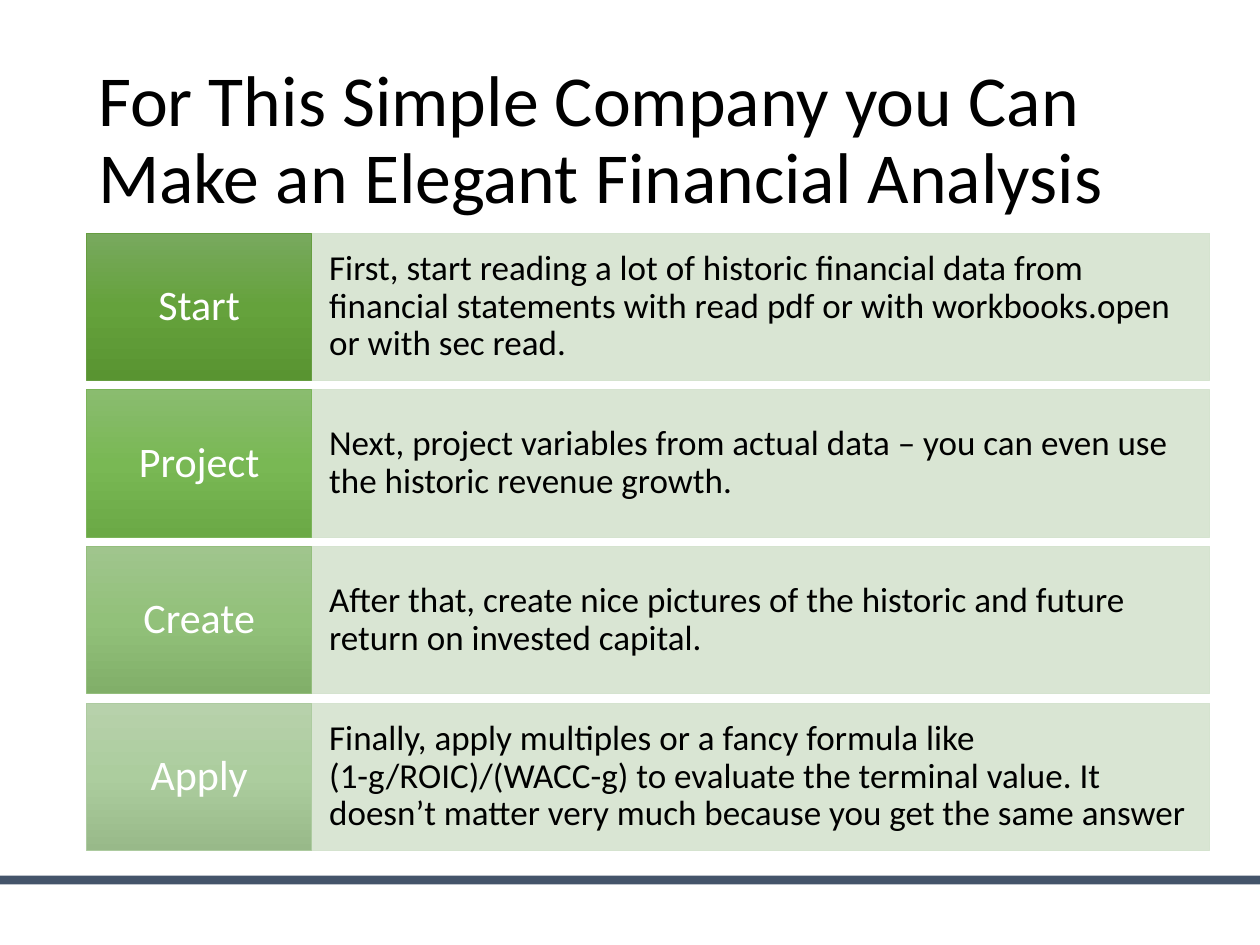
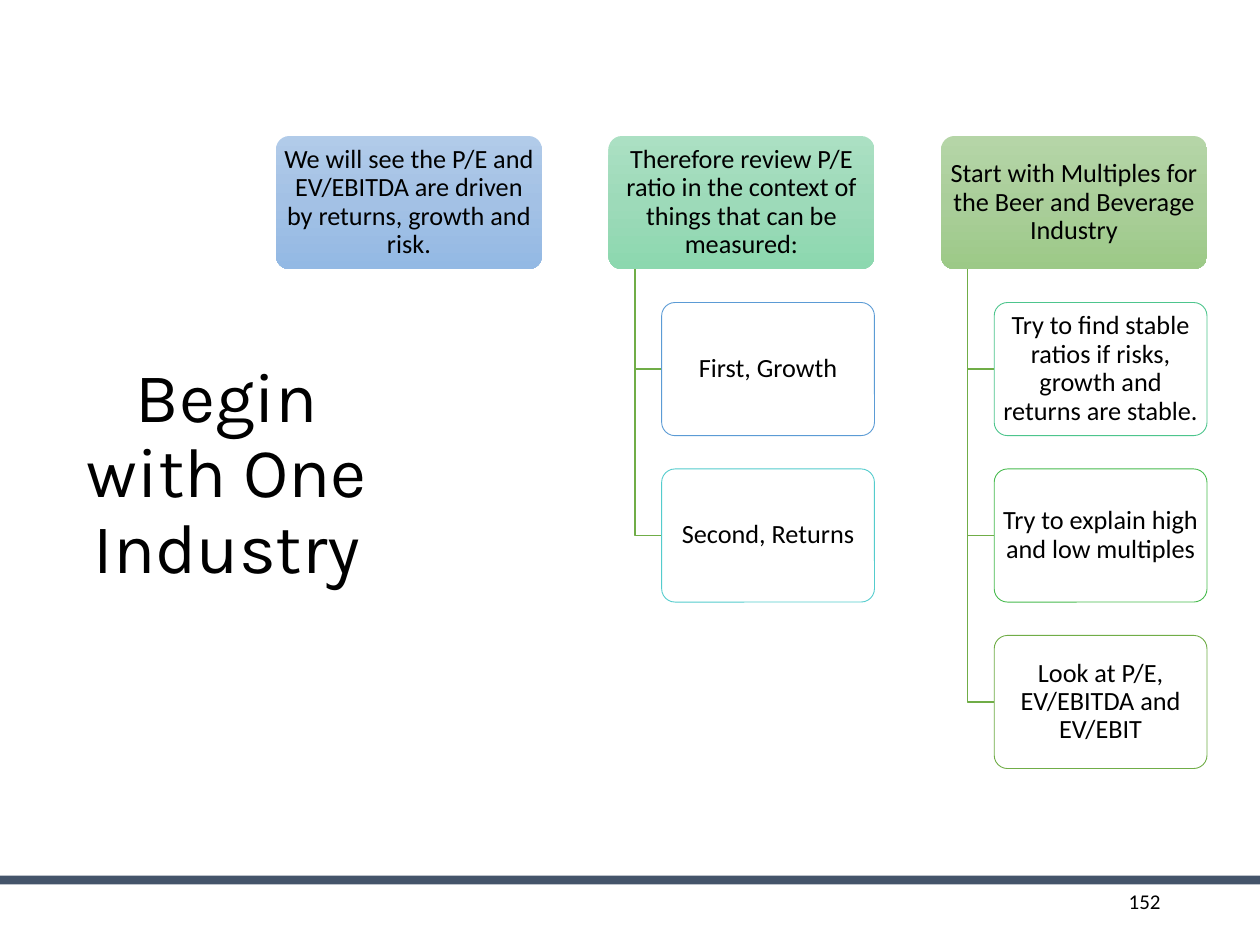
from copy import deepcopy
from dataclasses import dataclass

from lxml.etree import SubElement
from pptx import Presentation
from pptx.dml.color import RGBColor
from pptx.enum.shapes import MSO_SHAPE
from pptx.enum.text import MSO_ANCHOR, PP_ALIGN
from pptx.oxml.ns import qn
from pptx.util import Inches, Pt


@dataclass(frozen=True)
class Theme:
    body_font: str = "Calibri"
    accent_font: str = "Karla"
    black: str = "000000"
    white: str = "FFFFFF"
    band: str = "44546A"
    step_panel: str = "D5E3CF"
    branch: str = "70AD47"
    title_size: int = 41
    side_title_size: int = 40
    step_size: int = 24
    detail_size: int = 20
    node_size: int = 15
    number_size: int = 12
    outline: float = 0.5
    branch_width: float = 1
    alpha: int = 90


THEME = Theme()


@dataclass(frozen=True)
class Box:
    """A region in inches."""
    left: float
    top: float
    width: float
    height: float

    def inner(self, left, top, width, height):
        """A region inside this one, given as shares of its size."""
        return Box(self.left + left * self.width, self.top + top * self.height,
                   width * self.width, height * self.height)

    def lengths(self):
        return [Inches(n) for n in (self.left, self.top, self.width, self.height)]


PAGE = Box(0, 0, 10, 7.5)
COLUMNS, ROWS = 100, 75


def on_grid(left, top, width, height):
    """A region of the page, counted in grid columns and rows."""
    return PAGE.inner(left / COLUMNS, top / ROWS, width / COLUMNS, height / ROWS)


# Text and shapes

def write(shape, text, *, size, font=THEME.body_font, color=THEME.black,
          align=PP_ALIGN.LEFT, spacing=0.9, inset=(0.1, 0.05)):
    frame = shape.text_frame
    frame.word_wrap = True
    frame.vertical_anchor = MSO_ANCHOR.MIDDLE
    frame.margin_left = frame.margin_right = Inches(inset[0])
    frame.margin_top = frame.margin_bottom = Inches(inset[1])
    para = frame.paragraphs[0]
    para.alignment = align
    para.line_spacing = spacing
    span = para.add_run()
    span.text = text
    span.font.name = font
    span.font.size = Pt(size)
    span.font.color.rgb = RGBColor.from_string(color)


def add_text(page, box, text, **style):
    write(page.shapes.add_textbox(*box.lengths()), text, **style)


def set_line(shape, color, width):
    if color is None:
        shape.line.fill.background()
        return
    shape.line.color.rgb = RGBColor.from_string(color)
    shape.line.width = Pt(width)


def shade(shape, colors):
    """Fill from top to bottom with evenly spaced colours."""
    shape.fill.gradient()
    shape.fill.gradient_angle = 270
    stop_list = shape._element.spPr.find(".//" + qn("a:gsLst"))
    while len(stop_list) < len(colors):
        stop_list.append(deepcopy(stop_list[0]))
    for index, (stop, color) in enumerate(zip(shape.fill.gradient_stops, colors)):
        stop.position = index / (len(colors) - 1)
        stop.color.rgb = RGBColor.from_string(color)


def add_block(page, box, fill, line=None, kind=MSO_SHAPE.RECTANGLE, alpha=100):
    shape = page.shapes.add_shape(kind, *box.lengths())
    shape.shadow.inherit = False
    if kind == MSO_SHAPE.ROUNDED_RECTANGLE:
        shape.adjustments[0] = 0.1
    if isinstance(fill, str):
        shape.fill.solid()
        shape.fill.fore_color.rgb = RGBColor.from_string(fill)
        if alpha < 100:
            color = shape._element.spPr.find(".//" + qn("a:srgbClr"))
            SubElement(color, qn("a:alpha"), val=str(alpha * 1000))
    else:
        shade(shape, fill)
    set_line(shape, line, THEME.outline)
    return shape


def new_page(deck):
    page = deck.slides.add_slide(deck.slide_layouts[6])
    add_block(page, on_grid(0, 69.5, 100, 0.7), THEME.band)
    return page


# Steps: a label and its explanation on each row

STEPS = [
    ("Start", "First, start reading a lot of historic financial data from financial "
     "statements with read pdf or with workbooks.open or with sec read.",
     ("78A95E", "65A23C", "599431"), "669D40"),
    ("Project", "Next, project variables from actual data – you can even use the "
     "historic revenue growth.",
     ("8ABC6F", "79B854", "6BA946"), "7BB459"),
    ("Create", "After that, create nice pictures of the historic and future return "
     "on invested capital.",
     ("A0C58D", "92C17A", "81AF69"), "94BE7D"),
    ("Apply", "Finally, apply multiples or a fancy formula like (1-g/ROIC)/(WACC-g) "
     "to evaluate the terminal value. It doesn’t matter very much because you get "
     "the same answer",
     ("B7D1AB", "ACCD9E", "98B989"), "ADCBA0"),
]


def add_steps(page, box, steps, gap=0.015, label_share=0.2):
    pitch = (1 + gap) / len(steps)
    for index, (label, detail, shades, edge) in enumerate(steps):
        row = box.inner(0, index * pitch, 1, pitch - gap)
        panel = add_block(page, row.inner(label_share, 0, 1 - label_share, 1),
                          THEME.step_panel, THEME.step_panel, alpha=THEME.alpha)
        write(panel, detail, size=THEME.detail_size, inset=(0.14, 0.05))
        tag = add_block(page, row.inner(0, 0, label_share, 1), shades, edge)
        write(tag, label, size=THEME.step_size, color=THEME.white,
              align=PP_ALIGN.CENTER)


def build_analysis_page(deck):
    page = new_page(deck)
    add_steps(page, on_grid(6.9, 18.5, 89.1, 49), STEPS)
    add_text(page, on_grid(6.8, 4, 86.3, 14.5),
             "For This Simple Company you Can Make an Elegant Financial Analysis",
             size=THEME.title_size)


# Trees: a head with children hanging from a branch

TREES = [
    ("We will see the P/E and EV/EBITDA are driven by returns, growth and risk.",
     ("B1CBE9", "A3C1E5", "93B9E4"), []),
    ("Therefore review P/E ratio in the context of things that can be measured:",
     ("ABE0C3", "9DDAB9", "8CD8AF"),
     [("First, Growth", "5B9BD5"), ("Second, Returns", "54CCCD")]),
    ("Start with Multiples for the Beer and Beverage Industry",
     ("B5D5A7", "AACE9A", "9CC987"),
     [("Try to find stable ratios if risks, growth and returns are stable.", "4DC58D"),
      ("Try to explain high and low multiples", "48BB4F"),
      ("Look at P/E, EV/EBITDA and EV/EBIT", "70AD47")]),
]


def add_node(page, box, text, fill, line=None, alpha=100):
    node = add_block(page, box, fill, line, MSO_SHAPE.ROUNDED_RECTANGLE, alpha)
    write(node, text, size=THEME.node_size, align=PP_ALIGN.CENTER, inset=(0.03, 0.02))


def add_branch(page, head, child):
    """An elbow from under the head to the middle of the child's left side."""
    stem = Inches(head.left + head.width / 10)
    middle = Inches(child.top + child.height / 2)
    builder = page.shapes.build_freeform(stem, Inches(head.top + head.height))
    builder.add_line_segments([(stem, middle), (Inches(child.left), middle)],
                              close=False)
    branch = builder.convert_to_shape()
    branch.shadow.inherit = False
    branch.fill.background()
    set_line(branch, THEME.branch, THEME.branch_width)


def add_trees(page, box, trees, column_gap=0.25, row_gap=0.25, indent=0.2):
    """Gaps are shares of a node's width and height."""
    levels = 1 + max(len(children) for _, _, children in trees)
    width = 1 / (len(trees) + column_gap * (len(trees) - 1))
    height = 1 / (levels + row_gap * (levels - 1))
    for index, (text, shades, children) in enumerate(trees):
        head = box.inner(index * width * (1 + column_gap), 0, width, height)
        add_node(page, head, text, shades)
        for level, (child_text, edge) in enumerate(children, start=1):
            child = head.inner(indent, level * (1 + row_gap), 1 - indent, 1)
            add_branch(page, head, child)
            add_node(page, child, child_text, THEME.white, edge, THEME.alpha)


def build_industry_page(deck):
    page = new_page(deck)
    add_trees(page, on_grid(21.9, 10.8, 73.9, 50.2), TREES)
    add_text(page, on_grid(4.2, 7.6, 27.6, 60.2), "Begin with One Industry",
             size=THEME.side_title_size, font=THEME.accent_font,
             align=PP_ALIGN.CENTER)
    add_text(page, on_grid(70.6, 69.5, 22.5, 4), "152", size=THEME.number_size,
             align=PP_ALIGN.RIGHT, spacing=1.0)


def main():
    deck = Presentation()
    deck.slide_width = Inches(PAGE.width)
    deck.slide_height = Inches(PAGE.height)
    build_analysis_page(deck)
    build_industry_page(deck)
    deck.save("out.pptx")


if __name__ == "__main__":
    main()
